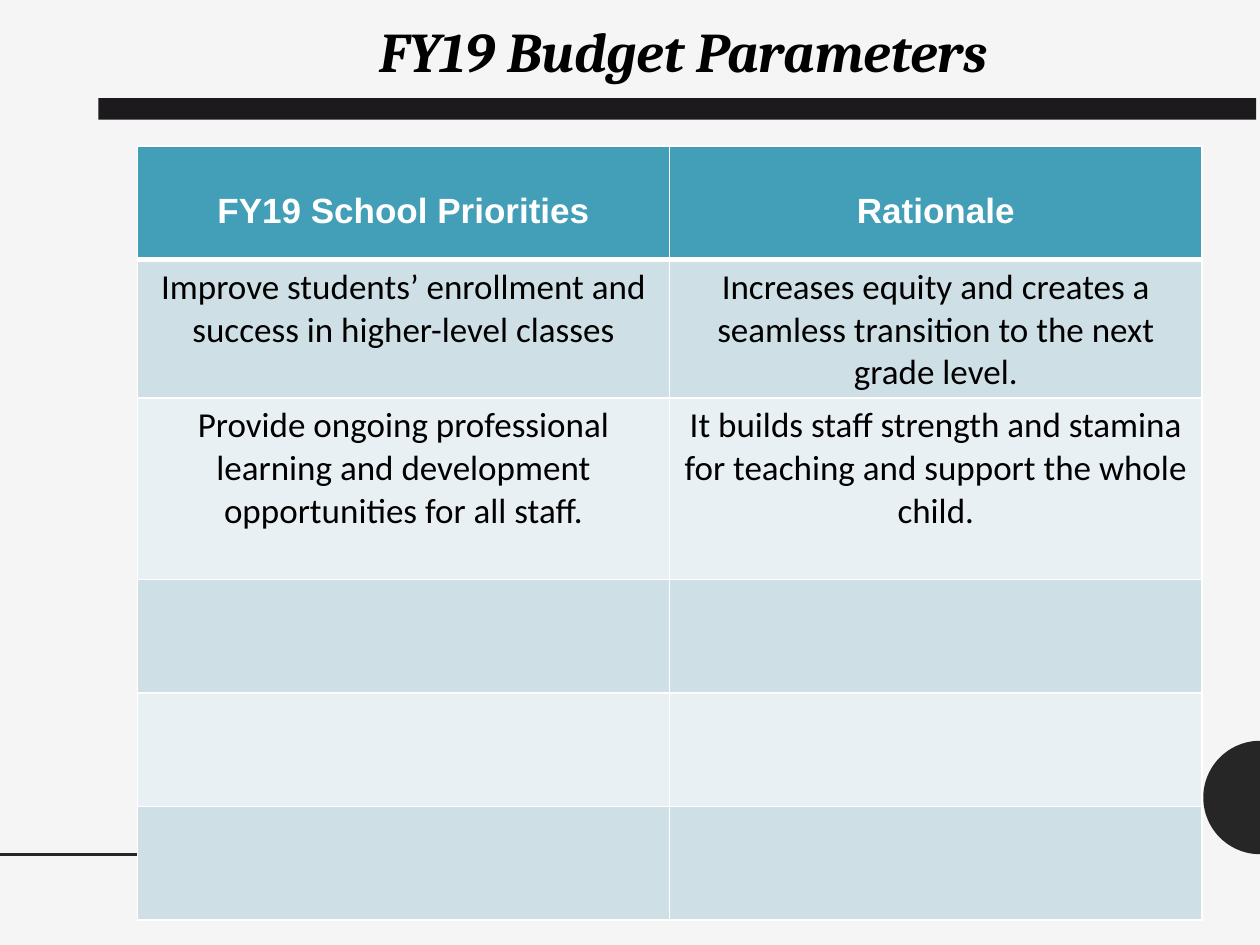
import math
from dataclasses import dataclass

import pptx
import pptx.dml.color
import pptx.enum.shapes
import pptx.enum.text
import pptx.oxml
import pptx.oxml.ns
import pptx.util
from pptx.util import Inches

RGB = pptx.dml.color.RGBColor.from_string
NS = pptx.oxml.ns.nsdecls("a")


@dataclass(frozen=True)
class Theme:
    background: str = "F5F5F5"
    ornament: str = "262626"
    bar: str = "1D1A1D"
    header: str = "439EB7"
    bands: tuple = ("CFDFE6", "E9F0F3")
    border: str = "FFFFFF"
    border_pt: int = 1
    header_border_pt: int = 3
    line_pt: int = 2


THEME = Theme()
TITLE = {"name": "Cambria", "size": 32, "bold": True, "italic": True, "color": "000000"}
HEADER = {"name": "Arial", "size": 20, "bold": True, "color": "FFFFFF"}
BODY = {"name": "Calibri", "size": 20, "bold": False, "color": "000000"}


@dataclass(frozen=True)
class Row:
    height: float
    texts: tuple = ("", "")


ROWS = [
    Row(0.9, ("FY19 School Priorities", "Rationale")),
    Row(1.1, (
        "Improve students’ enrollment and success in higher-level classes",
        "Increases equity and creates a seamless transition to the next grade level.",
    )),
    Row(1.44, (
        "Provide ongoing professional learning and development opportunities for all staff.",
        "It builds staff strength and stamina for teaching and support the whole child.",
    )),
    Row(0.9), Row(0.9), Row(0.9),
]


def write(tf, text: str, style: dict) -> None:
    p = tf.paragraphs[0]
    p.alignment = pptx.enum.text.PP_ALIGN.CENTER
    r = p.add_run()
    r.text = text
    for key, value in style.items():
        if key == "color":
            r.font.color.rgb = RGB(value)
        else:
            setattr(r.font, key, pptx.util.Pt(value) if key == "size" else value)


def paint(sp, color: str) -> None:
    sp.shadow.inherit = False
    sp.fill.solid()
    sp.fill.fore_color.rgb = RGB(color)
    sp.line.fill.background()


def add_half_disc(s, cx: float, cy: float, radius: float, steps: int = 48) -> None:
    angles = [math.pi * (0.5 + i / steps) for i in range(steps + 1)]
    points = [(Inches(cx + radius * math.cos(a)), Inches(cy + radius * math.sin(a)))
              for a in angles]
    builder = s.shapes.build_freeform(*points[0], scale=1.0)
    builder.add_line_segments(points[1:], close=True)
    paint(builder.convert_to_shape(), THEME.ornament)


def add_rule(s, x1: float, x2: float, y: float) -> None:
    line = s.shapes.add_connector(pptx.enum.shapes.MSO_CONNECTOR.STRAIGHT,
                                  Inches(x1), Inches(y), Inches(x2), Inches(y))
    line.line.color.rgb = RGB(THEME.ornament)
    line.line.width = pptx.util.Pt(THEME.line_pt)
    line._element.spPr.append(pptx.oxml.parse_xml(f"<a:effectLst {NS}/>"))


def set_borders(cell, top: float, bottom: float) -> None:
    tcPr = cell._tc.get_or_add_tcPr()
    widths = {"L": THEME.border_pt, "R": THEME.border_pt, "T": top, "B": bottom}
    for side, width in widths.items():
        tcPr.append(pptx.oxml.parse_xml(
            f'<a:ln{side} {NS} w="{pptx.util.Pt(width)}"><a:solidFill>'
            f'<a:srgbClr val="{THEME.border}"/></a:solidFill></a:ln{side}>'))


def add_priorities(s, left: float, top: float, width: float) -> None:
    height = sum(row.height for row in ROWS)
    table = s.shapes.add_table(len(ROWS), 2, Inches(left), Inches(top),
                               Inches(width), Inches(height)).table
    table.first_row = table.horz_banding = False
    for i, row in enumerate(ROWS):
        table.rows[i].height = Inches(row.height)
        for j, text in enumerate(row.texts):
            cell = table.cell(i, j)
            # The heavy border lies between the header and the first body row
            set_borders(cell,
                        THEME.header_border_pt if i == 1 else THEME.border_pt,
                        THEME.header_border_pt if i == 0 else THEME.border_pt)
            cell.fill.solid()
            cell.fill.fore_color.rgb = RGB(THEME.bands[(i - 1) % 2] if i else THEME.header)
            if i == 0:
                cell.margin_top = Inches(0.36)
            if text:
                write(cell.text_frame, text, BODY if i else HEADER)


def main() -> None:
    prs = pptx.Presentation()
    prs.slide_width, prs.slide_height = Inches(10), Inches(7.5)
    s = prs.slides.add_slide(prs.slide_layouts[6])
    s.background.fill.solid()
    s.background.fill.fore_color.rgb = RGB(THEME.background)

    # Background ornaments
    add_half_disc(s, 10, 6.33, 0.45)
    add_rule(s, 0, 3.69, 6.78)

    # Title and bar
    bar = s.shapes.add_shape(pptx.enum.shapes.MSO_SHAPE.RECTANGLE,
                             Inches(0.78), Inches(0.78), Inches(9.19), Inches(0.17))
    paint(bar, THEME.bar)
    tf = s.shapes.add_textbox(Inches(0.96), Inches(0.08), Inches(8.93), Inches(0.64)).text_frame
    tf.word_wrap = True
    tf.auto_size = pptx.enum.text.MSO_AUTO_SIZE.SHAPE_TO_FIT_TEXT
    write(tf, "FY19 Budget Parameters", TITLE)

    # Priorities table
    add_priorities(s, 1.09, 1.16, 8.45)
    prs.save("out.pptx")


if __name__ == "__main__":
    main()
